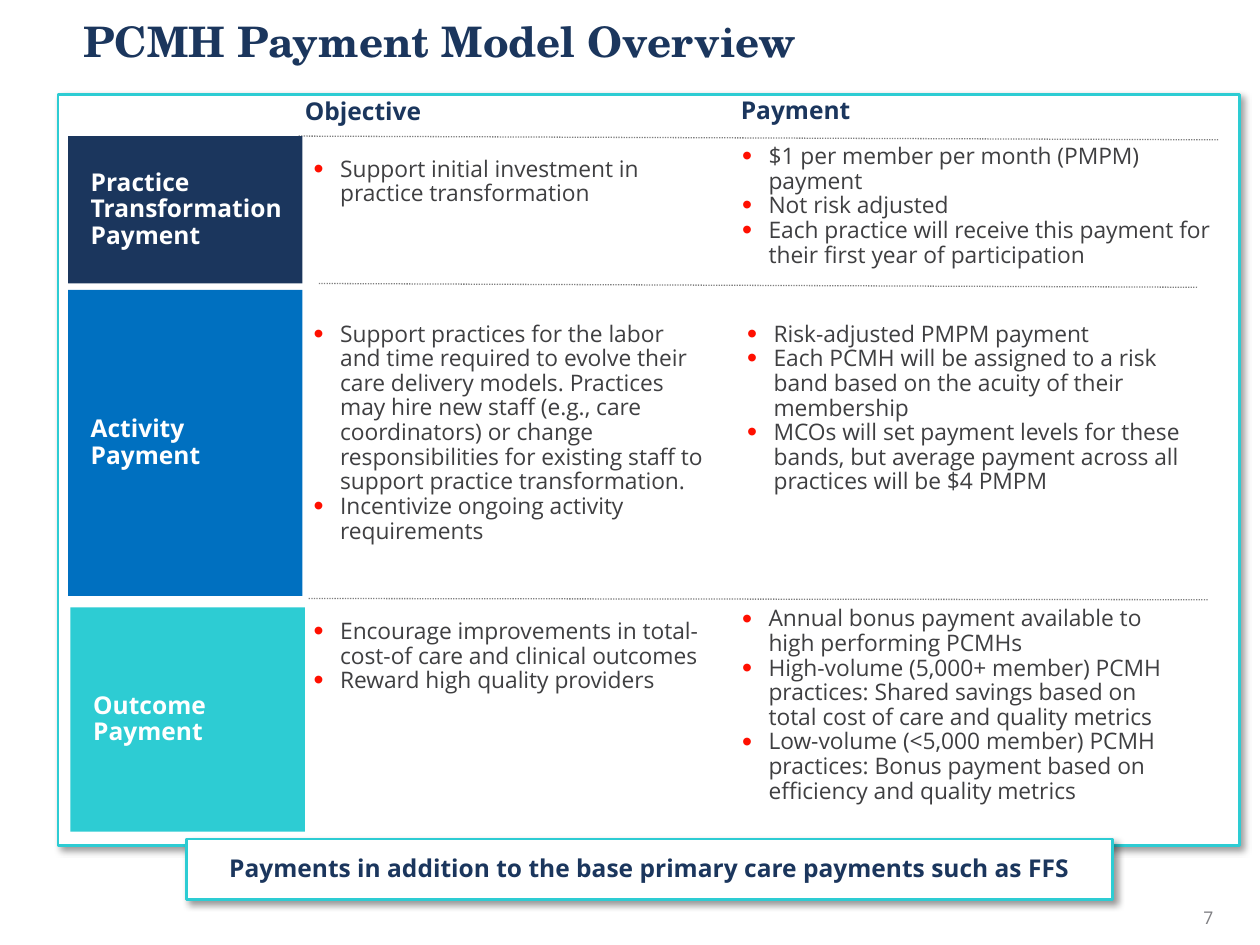
from lxml.etree import SubElement
from pptx import Presentation
from pptx.dml.color import RGBColor
from pptx.enum.dml import MSO_LINE
from pptx.enum.shapes import MSO_CONNECTOR, MSO_SHAPE
from pptx.enum.text import MSO_ANCHOR as Anchor, MSO_AUTO_SIZE as AutoSize, PP_ALIGN as Align
from pptx.oxml import parse_xml
from pptx.oxml.ns import nsdecls, qn
from pptx.util import Inches, Pt

NAVY = RGBColor(0x1B, 0x36, 0x5D)
BLUE = RGBColor(0x00, 0x70, 0xC0)
TEAL = RGBColor(0x2D, 0xCC, 0xD3)
WHITE = RGBColor(0xFF, 0xFF, 0xFF)
INK = RGBColor(0x3F, 0x3F, 0x41)
GRAY = RGBColor(0x80, 0x80, 0x80)
PAGE_GRAY = RGBColor(0x7E, 0x7E, 0x82)
RED = RGBColor(0xFF, 0x0F, 0x00)

SHADOW = f"""<a:effectLst {nsdecls("a")}>
  <a:outerShdw blurRad="{Pt(4)}" dist="{Pt(3)}" dir="2700000" algn="tl" rotWithShape="0">
    <a:srgbClr val="000000"><a:alpha val="40000"/></a:srgbClr>
  </a:outerShdw>
</a:effectLst>"""


class PaymentSlide:
    body_font = "Open Sans"
    title_font = "TeX Gyre Schola"
    line_spacing = 0.9

    def __init__(self, deck):
        self.slide = deck.slides.add_slide(deck.slide_layouts[6])

    def fill_text(self, frame, lines, size, color, bold=False, font=None, align=Align.LEFT,
                  anchor=Anchor.TOP, insets=(0, 0, 0, 0), bullets=False):
        frame.word_wrap = True
        frame.vertical_anchor = anchor
        (frame.margin_left, frame.margin_top,
         frame.margin_right, frame.margin_bottom) = map(Inches, insets)
        for index, line in enumerate(lines):
            paragraph = frame.add_paragraph() if index else frame.paragraphs[0]
            paragraph.text = line
            paragraph.alignment = align
            paragraph.line_spacing = self.line_spacing
            if bullets:
                self.bullet(paragraph)
            paragraph.font.name = font or self.body_font
            paragraph.font.size = Pt(size)
            paragraph.font.bold = bold
            paragraph.font.color.rgb = color

    def bullet(self, paragraph):
        props = paragraph._p.get_or_add_pPr()
        props.set("marL", str(Inches(0.22)))
        props.set("indent", str(Inches(-0.21)))
        SubElement(SubElement(props, qn("a:buClr")), qn("a:srgbClr"), val=str(RED))
        SubElement(props, qn("a:buSzPct"), val="125000")
        SubElement(props, qn("a:buFont"), typeface="Arial")
        SubElement(props, qn("a:buChar"), char="•")

    def text(self, place, lines, size, color, **style):
        box = self.slide.shapes.add_textbox(*map(Inches, place))
        self.fill_text(box.text_frame, lines, size, color, **style)
        box.text_frame.auto_size = AutoSize.SHAPE_TO_FIT_TEXT
        return box

    def title(self, place, words):
        box = self.text(place, [words], 24, NAVY, bold=True, font=self.title_font)
        box.text_frame.paragraphs[0]._p.get_or_add_pPr().set("marL", str(Inches(0.5)))

    def heading(self, place, words):
        self.text(place, [words], 14, NAVY, bold=True, anchor=Anchor.BOTTOM,
                  insets=(0, 0, 0, 0.02))

    def bullets(self, place, lines):
        self.text(place, lines, 13, INK, bullets=True)

    def page_number(self, place, number):
        box = self.text(place, [number], 10, PAGE_GRAY, align=Align.RIGHT, anchor=Anchor.MIDDLE)
        box.text_frame.word_wrap = False

    def rectangle(self, place, fill):
        shape = self.slide.shapes.add_shape(MSO_SHAPE.RECTANGLE, *map(Inches, place))
        shape.shadow.inherit = False
        shape.fill.solid()
        shape.fill.fore_color.rgb = fill
        shape.line.fill.background()
        return shape

    def label(self, place, fill, lines):
        self.fill_text(self.rectangle(place, fill).text_frame, lines, 14, WHITE, bold=True,
                       anchor=Anchor.MIDDLE, insets=(0.18, 0.05, 0.05, 0.05))

    def panel(self, place, words=None):
        shape = self.rectangle(place, WHITE)
        shape.line.color.rgb = TEAL
        shape.line.width = Pt(1.5)
        props = shape._element.spPr
        props.replace(props.find(qn("a:effectLst")), parse_xml(SHADOW))
        if words:
            self.fill_text(shape.text_frame, [words], 14, NAVY, bold=True, align=Align.CENTER,
                           anchor=Anchor.MIDDLE, insets=(0.1, 0.05, 0.1, 0.05))

    def divider(self, ends):
        line = self.slide.shapes.add_connector(MSO_CONNECTOR.STRAIGHT, *map(Inches, ends))
        line.line.color.rgb = GRAY
        line.line.width = Pt(0.75)
        line.line.dash_style = MSO_LINE.ROUND_DOT
        SubElement(line._element.spPr, qn("a:effectLst"))


ROWS = [
    ((0.54, 1.08, 1.86, 1.17), NAVY, ["Practice Transformation", "Payment"],
     (2.48, 1.25, 3.13, 0.44),
     ["Support initial investment in practice transformation"],
     (5.88, 1.15, 3.76, 1.09),
     ["$1 per member per month (PMPM) payment",
      "Not risk adjusted",
      "Each practice will receive this payment for their first year of participation"]),
    ((0.54, 2.3, 1.86, 2.43), BLUE, ["Activity Payment"],
     (2.48, 2.56, 3.13, 1.97),
     ["Support practices for the labor and time required to evolve their care delivery models. "
      "Practices may hire new staff (e.g., care coordinators) or change responsibilities for "
      "existing staff to support practice transformation.",
      "Incentivize ongoing activity requirements"],
     (5.92, 2.56, 3.5, 1.75),
     ["Risk-adjusted PMPM payment",
      "Each PCMH will be assigned to a risk band based on the acuity of their membership",
      "MCOs will set payment levels for these bands, but average payment across all practices "
      "will be $4 PMPM"]),
    ((0.56, 4.82, 1.86, 1.78), TEAL, ["Outcome", "Payment"],
     (2.48, 4.92, 3.13, 0.66),
     ["Encourage improvements in total-cost-of care and clinical outcomes",
      "Reward high quality providers"],
     (5.88, 4.82, 3.47, 1.97),
     ["Annual bonus payment available to high performing PCMHs",
      "High-volume (5,000+ member) PCMH practices: Shared savings based on total cost of care "
      "and quality metrics",
      "Low-volume (<5,000 member) PCMH practices: Bonus payment based on efficiency and "
      "quality metrics"]),
]
DIVIDERS = [(2.37, 1.08, 9.67, 1.11), (2.53, 2.25, 9.5, 2.28), (2.45, 4.75, 9.59, 4.76)]


def main():
    deck = Presentation()
    deck.slide_width, deck.slide_height = Inches(10), Inches(7.5)
    overview = PaymentSlide(deck)
    overview.page_number((9.45, 7.21, 0.18, 0.17), "7")
    overview.panel((0.46, 0.75, 9.38, 5.96))
    overview.title((0.16, 0.17, 9.26, 0.4), "PCMH Payment Model Overview")
    for ends in DIVIDERS:
        overview.divider(ends)
    overview.heading((2.42, 0.76, 1.66, 0.26), "Objective")
    overview.heading((5.88, 0.75, 1.94, 0.26), "Payment")
    for label_place, fill, name, objective_place, objective, payment_place, payment in ROWS:
        overview.label(label_place, fill, name)
        overview.bullets(objective_place, objective)
        overview.bullets(payment_place, payment)
    overview.panel((1.48, 6.66, 7.35, 0.48),
                   "Payments in addition to the base primary care payments such as FFS")
    deck.save("out.pptx")


if __name__ == "__main__":
    main()
